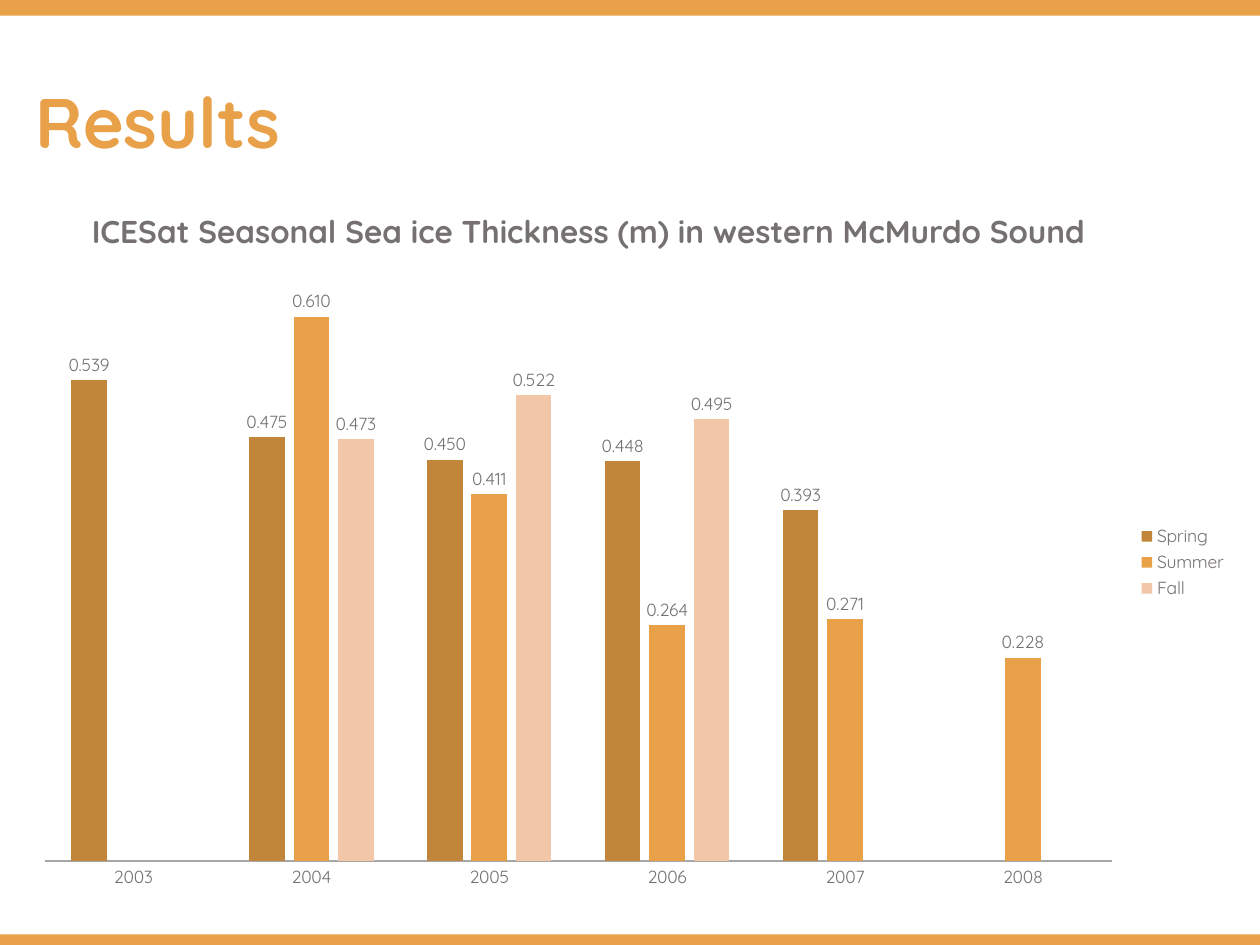
from dataclasses import dataclass

from lxml import etree
from pptx import Presentation
from pptx.chart.data import CategoryChartData
from pptx.dml.color import RGBColor
from pptx.enum.chart import XL_CHART_TYPE, XL_LABEL_POSITION, XL_LEGEND_POSITION, XL_TICK_MARK
from pptx.enum.shapes import MSO_SHAPE
from pptx.enum.text import MSO_ANCHOR, MSO_AUTO_SIZE, PP_ALIGN
from pptx.oxml.ns import qn
from pptx.util import Pt

COLUMNS = XL_CHART_TYPE.COLUMN_CLUSTERED
LABELS_ABOVE = XL_LABEL_POSITION.OUTSIDE_END
LEGEND_RIGHT = XL_LEGEND_POSITION.RIGHT
NO_TICKS = XL_TICK_MARK.NONE
RECTANGLE = MSO_SHAPE.RECTANGLE
TOP = MSO_ANCHOR.TOP
NO_FIT = MSO_AUTO_SIZE.NONE
LEFT = PP_ALIGN.LEFT

WIDTH, HEIGHT = 720, 540
YEARS = ["2003", "2004", "2005", "2006", "2007", "2008"]
THICKNESS = {
    "Spring": (0.539, 0.475, 0.450, 0.448, 0.393, None),
    "Summer": (None, 0.610, 0.411, 0.264, 0.271, 0.228),
    "Fall": (None, 0.473, 0.522, 0.495, None, None),
}


@dataclass(frozen=True)
class Theme:
    """Colours, font and type sizes of the slide."""
    font: str = "Quicksand"
    accent: RGBColor = RGBColor(0xE9, 0xA1, 0x49)
    text: RGBColor = RGBColor(0x76, 0x71, 0x71)
    axis: RGBColor = RGBColor(0xA6, 0xA6, 0xA6)
    seasons: tuple = (
        RGBColor(0xC2, 0x86, 0x3B),
        RGBColor(0xE9, 0xA1, 0x49),
        RGBColor(0xF1, 0xC7, 0xA8),
    )
    title_size: int = 40
    heading_size: int = 18
    chart_size: int = 10


THEME = Theme()


def points(box):
    """Turn a box of plain numbers into lengths in points."""
    return [Pt(value) for value in box]


def set_font(font, size, color, bold=False):
    """Apply the theme font with a size and colour."""
    font.name, font.size, font.bold = THEME.font, Pt(size), bold
    font.color.rgb = color


def add_band(slide, box):
    """Draw a plain accent band across the slide."""
    band = slide.shapes.add_shape(RECTANGLE, *points(box))
    band.shadow.inherit = False
    band.fill.solid()
    band.fill.fore_color.rgb = THEME.accent
    band.line.fill.background()


def place_title(slide, box, text):
    """Move and format the title placeholder."""
    title = slide.shapes.title
    title.left, title.top, title.width, title.height = points(box)
    frame = title.text_frame
    frame.text = text
    frame.vertical_anchor, frame.auto_size = TOP, NO_FIT
    paragraph = frame.paragraphs[0]
    paragraph.alignment, paragraph.line_spacing = LEFT, 0.9
    set_font(paragraph.font, THEME.title_size, THEME.accent, bold=True)


def add_heading(slide, box, text):
    """Add the one-line heading over the chart."""
    frame = slide.shapes.add_textbox(*points(box)).text_frame
    frame.text = text
    frame.word_wrap = False
    paragraph = frame.paragraphs[0]
    paragraph.alignment = LEFT
    set_font(paragraph.font, THEME.heading_size, THEME.text, bold=True)


def set_plot_layout(chart, fractions):
    """Fix the inner plot area as fractions of the chart box."""
    plot_area = chart.plots[0]._element.getparent()
    for old in plot_area.findall(qn("c:layout")):
        plot_area.remove(old)
    layout = etree.Element(qn("c:layout"))
    plot_area.insert(0, layout)
    manual = etree.SubElement(layout, qn("c:manualLayout"))
    settings = {"layoutTarget": "inner", "xMode": "edge", "yMode": "edge"}
    settings.update(zip("xywh", map(str, fractions)))
    for name, value in settings.items():
        etree.SubElement(manual, qn(f"c:{name}")).set("val", value)


def add_thickness_chart(slide, box):
    """Add the clustered columns of ice thickness by season."""
    data = CategoryChartData(number_format="0.000")
    data.categories = YEARS
    for season, values in THICKNESS.items():
        data.add_series(season, values)
    chart = slide.shapes.add_chart(COLUMNS, *points(box), data).chart
    chart.has_title = False
    set_font(chart.font, THEME.chart_size, THEME.text)

    chart.has_legend = True
    chart.legend.position = LEGEND_RIGHT
    chart.legend.include_in_layout = False

    values_axis, years_axis = chart.value_axis, chart.category_axis
    values_axis.visible = values_axis.has_major_gridlines = False
    values_axis.minimum_scale, values_axis.maximum_scale = 0, 0.7
    years_axis.major_tick_mark = years_axis.minor_tick_mark = NO_TICKS
    years_axis.format.line.color.rgb = THEME.axis
    years_axis.format.line.width = Pt(0.75)

    plot = chart.plots[0]
    plot.gap_width, plot.overlap = 150, -25
    plot.vary_by_categories = False
    plot.has_data_labels = True
    labels = plot.data_labels
    labels.show_value, labels.position = True, LABELS_ABOVE
    labels.number_format, labels.number_format_is_linked = "0.000", False
    set_font(labels.font, THEME.chart_size, THEME.text)
    for series, color in zip(plot.series, THEME.seasons):
        series.format.fill.solid()
        series.format.fill.fore_color.rgb = color
    set_plot_layout(chart, (0.02, 0.02, 0.875, 0.92))


def build_results(presentation):
    """Build the results slide."""
    slide = presentation.slides.add_slide(presentation.slide_layouts[5])
    add_band(slide, (0, 0, WIDTH, 9))
    add_band(slide, (0, HEIGHT - 6, WIDTH, 6))
    place_title(slide, (13, 46.8, 157, 55.4), "Results")
    add_thickness_chart(slide, (11.5, 127.4, 697, 388))
    add_heading(slide, (45.4, 117.4, 593.3, 29),
                "ICESat Seasonal Sea ice Thickness (m) in western McMurdo Sound")


def main():
    """Create and save the presentation."""
    presentation = Presentation()
    presentation.slide_width, presentation.slide_height = Pt(WIDTH), Pt(HEIGHT)
    build_results(presentation)
    presentation.save("out.pptx")


if __name__ == "__main__":
    main()
